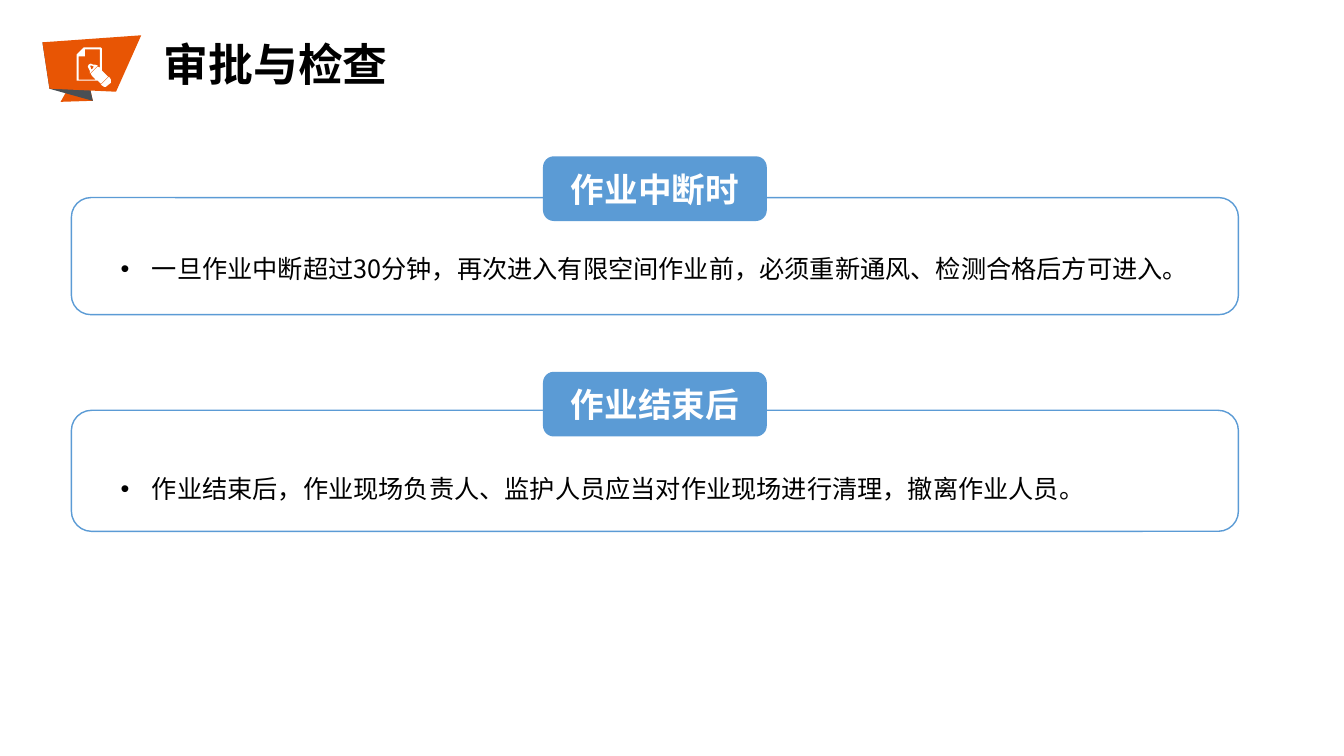
from pptx import Presentation
from pptx.dml.color import RGBColor
from pptx.enum.shapes import MSO_SHAPE as Preset
from pptx.enum.text import MSO_ANCHOR as Anchor, MSO_AUTO_SIZE as AutoSize, PP_ALIGN as Align
from pptx.oxml.ns import qn
from pptx.util import Cm, Pt
from lxml.etree import SubElement

FONT = "Noto Sans CJK SC"
BLUE, ORANGE, SLATE, WHITE, BLACK = "5B9BD5", "E85504", "494F54", "FFFFFF", "000000"

STAND = [(50, 65), (41, 25), (18, 66)]
FOLD = [(41, 25), (0, 7), (7, 53), (50, 65)]
SCREEN = [(98, 0), (0, 7), (7, 53), (73, 56)]
PENCIL_END = [(68, 47), (63, 51), (61, 51), (58, 49), (66, 41), (68, 44)]
PAGE_INSIDE = [(57, 14), (42, 14), (42, 21), (36, 21), (36, 44), (53, 44),
               (49, 40), (48, 38), (49, 37), (54, 32), (55, 31), (57, 32)]
PAGE_EDGE = [(59, 47), (58, 48), (57, 47), (55, 45), (35, 45), (34, 45), (34, 20), (34, 19),
             (41, 12), (58, 12), (59, 13), (59, 35), (64, 40), (65, 41), (64, 42)]
TIP_INSIDE = [(49, 30), (48, 30), (47, 30), (48, 32), (48, 34), (50, 33), (51, 31)]
TIP_EDGE = [(51, 34), (50, 35), (47, 38), (47, 35), (46, 33), (45, 31),
            (46, 29), (48, 28), (50, 29), (52, 29), (55, 30), (53, 32)]
ICON_LAYERS = [
    (ORANGE, [STAND]),
    (SLATE, [FOLD]),
    (ORANGE, [SCREEN]),
    (WHITE, [PENCIL_END, PAGE_INSIDE, PAGE_EDGE, TIP_INSIDE, TIP_EDGE]),
]

PANELS = [
    ((1.8, 4.98, 29.41, 2.95), 1.04, 0.91, "作业中断时",
     "一旦作业中断超过30分钟，再次进入有限空间作业前，必须重新通风、检测合格后方可进入。"),
    ((1.8, 10.34, 29.41, 3.05), 0.97, 1.09, "作业结束后",
     "作业结束后，作业现场负责人、监护人员应当对作业现场进行清理，撤离作业人员。"),
]


def color(value):
    return RGBColor.from_string(value)


def write(frame, words, size, ink, align, bold=False):
    frame.text = words
    paragraph = frame.paragraphs[0]
    paragraph.alignment = align
    run = paragraph.runs[0]
    run.font.size = Pt(size)
    run.font.bold = bold
    run.font.name = FONT
    run.font.color.rgb = color(ink)
    SubElement(run.font._element, qn("a:ea"), typeface=FONT)
    return paragraph


def add_text(slide, box, wrap):
    frame = slide.shapes.add_textbox(*map(Cm, box)).text_frame
    frame.word_wrap = wrap
    frame.auto_size = AutoSize.SHAPE_TO_FIT_TEXT
    return frame


def add_rounded(slide, box):
    rounded = slide.shapes.add_shape(Preset.ROUNDED_RECTANGLE, *map(Cm, box))
    rounded.shadow.inherit = False
    return rounded


def add_icon(slide, left, top):
    for fill, contours in ICON_LAYERS:
        builder = slide.shapes.build_freeform(*contours[0][0], scale=Cm(0.0254))
        for index, contour in enumerate(contours):
            if index:
                builder.move_to(*contour[0])
            builder.add_line_segments(contour[1:], close=True)
        layer = builder.convert_to_shape(Cm(left), Cm(top))
        layer.shadow.inherit = False
        layer.fill.solid()
        layer.fill.fore_color.rgb = color(fill)
        layer.line.fill.background()


def add_header(slide, left, top):
    add_icon(slide, left, top)
    title = add_text(slide, (left + 2.77, top + 0.41, 6.22, 1.17), False)
    write(title, "审批与检查", 32, BLACK, Align.CENTER, True).line_spacing = Pt(24)


def add_panel(slide, box, badge_rise, rule_drop, heading, rule):
    left, top, width, height = box
    border = add_rounded(slide, box)
    border.fill.background()
    border.line.color.rgb = color(BLUE)
    border.line.width = Pt(1)

    rule_frame = add_text(slide, (left + 0.99, top + rule_drop, 28.58, 1.35), True)
    paragraph = write(rule_frame, rule, 18, BLACK, Align.JUSTIFY)
    paragraph.line_spacing = 1.5
    properties = paragraph._p.get_or_add_pPr()
    properties.set("marL", str(Cm(0.79)))
    properties.set("indent", str(-Cm(0.79)))
    SubElement(properties, qn("a:buFont"), typeface="Arial")
    SubElement(properties, qn("a:buChar"), char="•")

    badge_width = 5.64
    badge = add_rounded(slide, (left + (width - badge_width) / 2, top - badge_rise, badge_width, 1.63))
    badge.fill.solid()
    badge.fill.fore_color.rgb = color(BLUE)
    badge.line.fill.background()
    badge.text_frame.vertical_anchor = Anchor.MIDDLE
    write(badge.text_frame, heading, 24, WHITE, Align.CENTER, True)


def main():
    deck = Presentation()
    deck.slide_width, deck.slide_height = Cm(33.87), Cm(19.05)
    slide = deck.slides.add_slide(deck.slide_layouts[6])
    add_header(slide, 1.07, 0.89)
    for panel in PANELS:
        add_panel(slide, *panel)
    deck.save("out.pptx")


if __name__ == "__main__":
    main()
